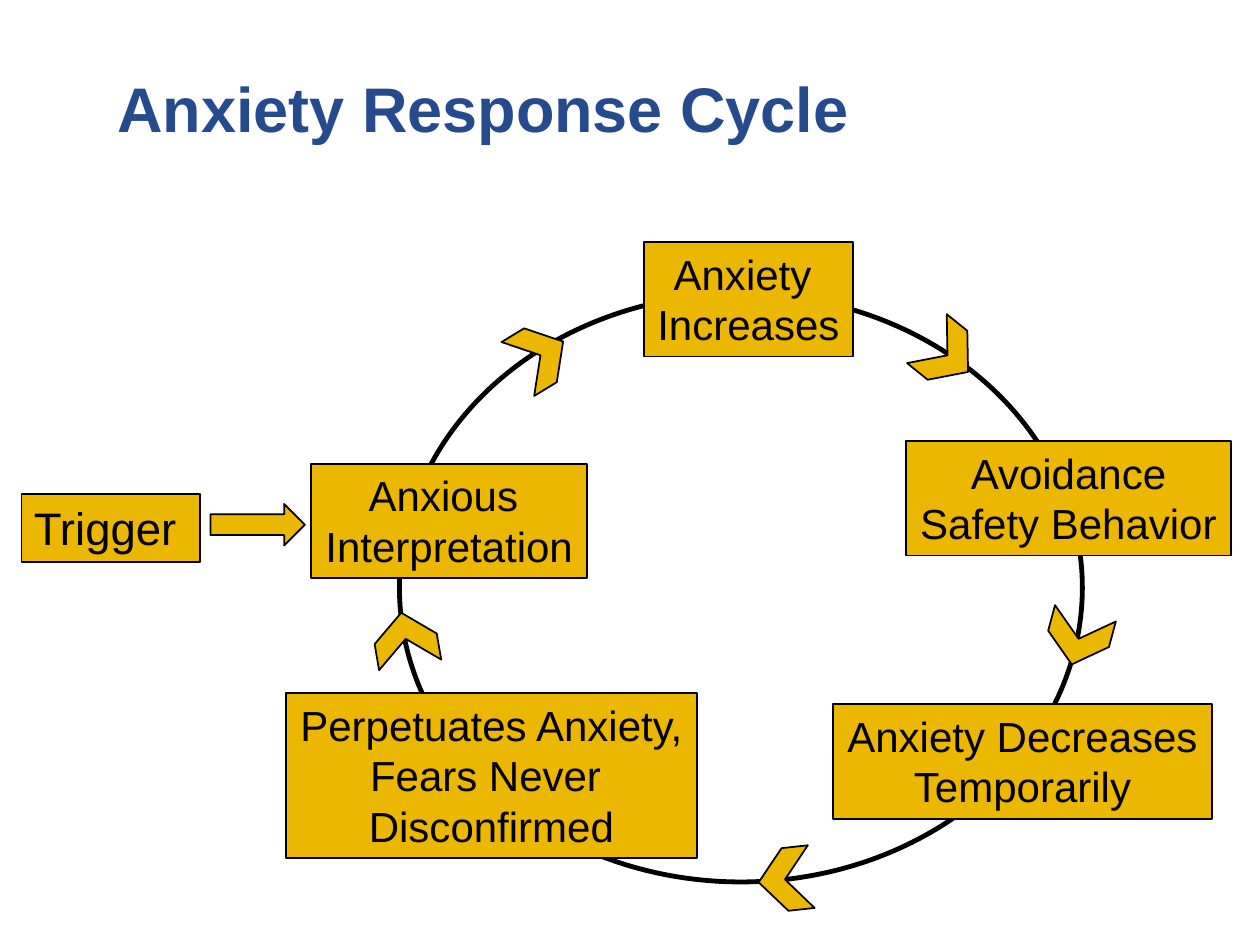
import pptx
import pptx.dml.color
import pptx.enum.shapes
import pptx.enum.text
import pptx.util
from dataclasses import dataclass

Inches = pptx.util.Inches
Pt = pptx.util.Pt
RGB = pptx.dml.color.RGBColor
Shape = pptx.enum.shapes.MSO_SHAPE
Align = pptx.enum.text.PP_ALIGN
Anchor = pptx.enum.text.MSO_ANCHOR
AutoSize = pptx.enum.text.MSO_AUTO_SIZE


@dataclass(frozen=True)
class Theme:
    font: str = "Arial"
    heading: RGB = RGB(0x25, 0x4B, 0x8E)
    gold: RGB = RGB(0xEB, 0xB7, 0x00)
    ink: RGB = RGB(0, 0, 0)
    title_size: int = 36
    trigger_size: int = 26
    step_size: int = 24
    outline: float = 1
    ring: float = 2.75


THEME = Theme()
CHEVRON_SIZE = (0.42, 0.5)

STEPS = [
    ("Anxiety \nIncreases", (5.11, 1.92, 1.66, 0.91)),
    ("Avoidance\nSafety Behavior", (7.19, 3.5, 2.58, 0.91)),
    ("Anxiety Decreases\nTemporarily", (6.61, 5.59, 3.01, 0.91)),
    ("Perpetuates Anxiety,\nFears Never \nDisconfirmed", (2.27, 5.5, 3.26, 1.31)),
    ("Anxious \nInterpretation", (2.47, 3.68, 2.19, 0.91)),
]

CHEVRONS = [
    (4.08, 2.57, 328.8),
    (7.31, 2.57, 39),
    (8.35, 4.82, 105),
    (6.02, 6.73, 173.8),
    (3.01, 4.82, 260.3),
]


def style_text(frame, size, color, align, bold=False):
    for paragraph in frame.paragraphs:
        paragraph.alignment = align
        for run in paragraph.runs:
            run.font.name = THEME.font
            run.font.size = Pt(size)
            run.font.bold = bold
            run.font.color.rgb = color


def add_title(slide, text):
    title = slide.shapes.title
    title.left, title.top = Inches(0.83), Inches(0.5)
    title.width, title.height = Inches(7.56), Inches(1.21)
    title.text_frame.text = text
    title.text_frame.vertical_anchor = Anchor.TOP
    style_text(title.text_frame, THEME.title_size, THEME.heading, Align.LEFT, True)


def add_outlined(slide, kind, box, line_width=THEME.outline, filled=True):
    shape = slide.shapes.add_shape(kind, *map(Inches, box))
    shape.shadow.inherit = False
    if filled:
        shape.fill.solid()
        shape.fill.fore_color.rgb = THEME.gold
    else:
        shape.fill.background()
    shape.line.color.rgb = THEME.ink
    shape.line.width = Pt(line_width)
    return shape


def add_label(slide, text, box, size=THEME.step_size, align=Align.CENTER, wrap=False):
    frame = add_outlined(slide, Shape.RECTANGLE, box).text_frame
    frame.text = text
    frame.word_wrap = wrap
    frame.auto_size = AutoSize.SHAPE_TO_FIT_TEXT
    frame.vertical_anchor = Anchor.TOP
    style_text(frame, size, THEME.ink, align)


def add_chevron(slide, left, top, angle):
    chevron = add_outlined(slide, Shape.CHEVRON, (left, top, *CHEVRON_SIZE))
    chevron.rotation = angle


def main():
    deck = pptx.Presentation()
    deck.slide_width, deck.slide_height = Inches(10), Inches(7.5)
    slide = deck.slides.add_slide(deck.slide_layouts[5])

    add_title(slide, "Anxiety Response Cycle")
    add_label(slide, "Trigger", (0.17, 3.92, 1.42, 0.54),
              THEME.trigger_size, Align.LEFT, True)
    add_outlined(slide, Shape.RIGHT_ARROW, (1.67, 4, 0.75, 0.33))
    add_outlined(slide, Shape.OVAL, (3.17, 2.33, 5.42, 4.67), THEME.ring, False)
    for left, top, angle in CHEVRONS:
        add_chevron(slide, left, top, angle)
    for text, box in STEPS:
        add_label(slide, text, box)

    deck.save("out.pptx")


if __name__ == "__main__":
    main()
